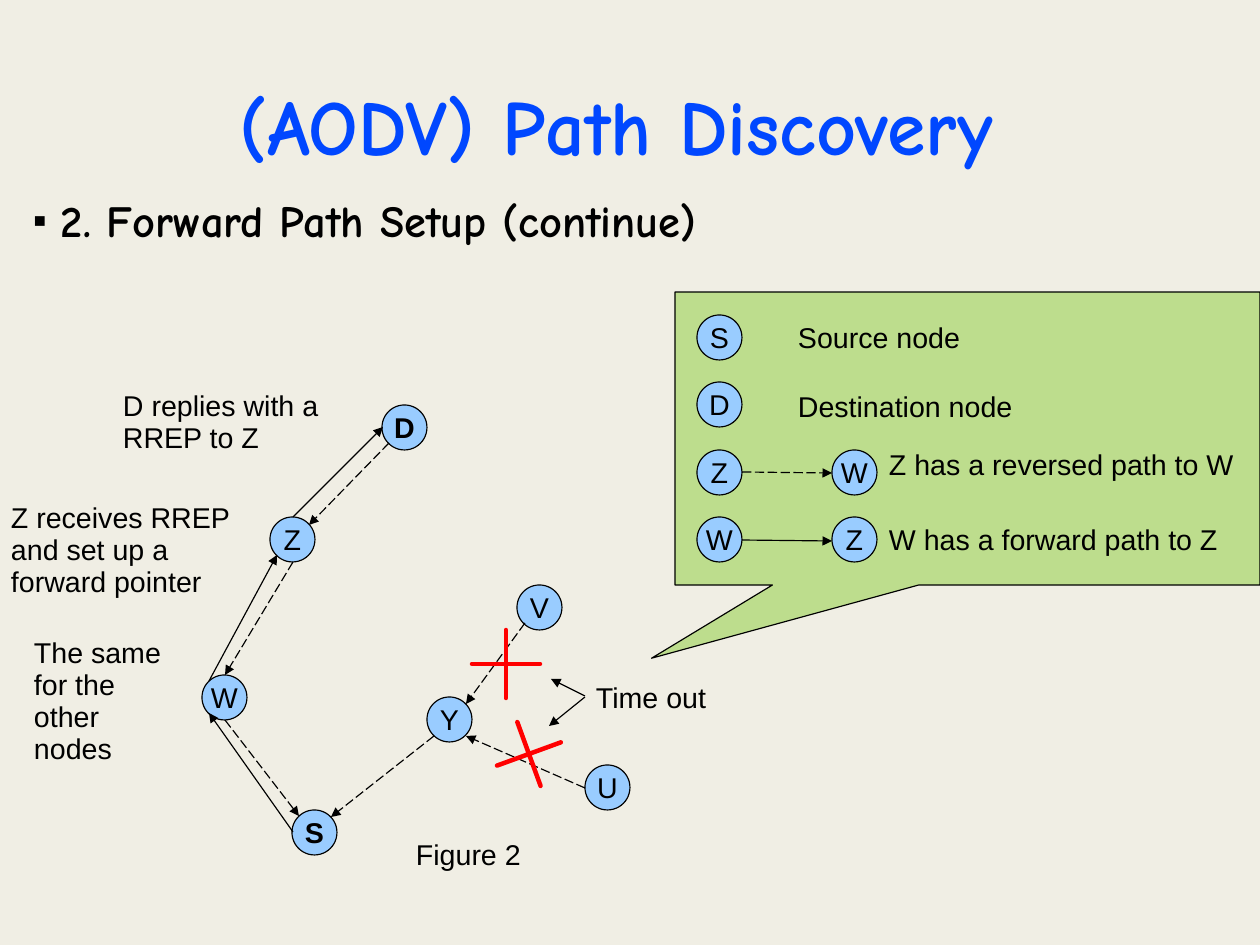
"""Build the slide on forward path setup in AODV path discovery."""
from dataclasses import dataclass

from lxml.etree import SubElement
from pptx import Presentation
from pptx.dml.color import RGBColor
from pptx.enum.dml import MSO_LINE
from pptx.enum.shapes import MSO_CONNECTOR, MSO_SHAPE
from pptx.enum.text import MSO_ANCHOR, MSO_AUTO_SIZE, PP_ALIGN
from pptx.oxml.ns import qn
from pptx.shapes.autoshape import Shape
from pptx.slide import Slide
from pptx.text.text import TextFrame
from pptx.util import Emu, Pt

SCALE = 8000
SIZE = 45
CROSS = 68
PAPER = RGBColor(0xF0, 0xEE, 0xE4)
BLACK = RGBColor(0, 0, 0)
BLUE = RGBColor(0x00, 0x47, 0xFF)
SKY = RGBColor(0x99, 0xCC, 0xFF)
GREEN = RGBColor(0xBD, 0xDD, 0x8D)
RED = RGBColor(0xFF, 0, 0)


@dataclass(frozen=True)
class Node:
    """A lettered circle."""
    text: str
    left: int
    top: int
    bold: bool = False


@dataclass(frozen=True)
class Label:
    """A block of plain text."""
    text: str
    left: int
    top: int
    width: int
    height: int = 43


@dataclass(frozen=True)
class Arrow:
    """A line with a head at its end."""
    left: int
    top: int
    right: int
    end: int
    dashed: bool = False


@dataclass(frozen=True)
class Cross:
    """A red mark on a path that timed out."""
    left: int
    top: int
    turn: int = 0


NODES = (
    Node("U", 585, 765), Node("D", 382, 405, True), Node("Y", 427, 697),
    Node("S", 292, 810, True), Node("V", 517, 585), Node("Z", 270, 517),
    Node("W", 202, 675),
    Node("S", 697, 315), Node("D", 697, 382),
    Node("Z", 697, 450), Node("W", 832, 450),
    Node("W", 697, 517), Node("Z", 832, 517),
)
LABELS = (
    Label("Source node", 787, 315, 337),
    Label("Destination node", 787, 384, 270),
    Label("Z has a reversed path to W", 878, 442, 382),
    Label("W has a forward path to Z", 878, 517, 360),
    Label("D replies with a RREP to Z", 112, 383, 247, 75),
    Label("Z receives RREP and set up a forward pointer", 0, 495, 247, 107),
    Label("The same for the other nodes", 23, 630, 158, 158),
    Label("Time out", 585, 675, 225),
    Label("Figure 2", 405, 832, 293),
)
ARROWS = (
    Arrow(225, 720, 299, 816, True), Arrow(434, 736, 331, 817, True),
    Arrow(293, 562, 225, 675, True), Arrow(525, 623, 466, 704, True),
    Arrow(585, 788, 466, 736, True), Arrow(389, 443, 309, 525, True),
    Arrow(742, 472, 832, 473, True), Arrow(742, 540, 832, 541),
    Arrow(293, 517, 383, 427), Arrow(209, 681, 277, 555),
    Arrow(293, 832, 209, 713), Arrow(585, 697, 549, 726),
    Arrow(585, 696, 551, 679),
)
MARKS = (Cross(472, 630), Cross(495, 720, -20))


def px(count: int) -> Emu:
    """Turn pixels into EMU."""
    return Emu(count * SCALE)


def place(shape: Shape, left: int, top: int, width: int, height: int) -> None:
    """Move and size a shape."""
    shape.left, shape.top = px(left), px(top)
    shape.width, shape.height = px(width), px(height)


def write(frame: TextFrame, text: str, size: int, font: str = "Arial",
          color: RGBColor = BLACK, bold: bool = False,
          space: float = 0.93, top: int = 8) -> None:
    """Fill a frame with one styled paragraph."""
    frame.text = text
    frame.auto_size = MSO_AUTO_SIZE.NONE
    frame.word_wrap = True
    frame.margin_left = frame.margin_right = px(11)
    frame.margin_top, frame.margin_bottom = px(top), px(6)
    line = frame.paragraphs[0]
    line.line_spacing = space
    line.space_before = Pt(0)
    face = line.runs[0].font
    face.name, face.size, face.bold = font, Pt(size), bold
    face.color.rgb = color


def paint(shape: Shape, fill: RGBColor, edge: RGBColor = BLACK,
          width: float = 0.75) -> None:
    """Give a shape its fill and line."""
    shape.shadow.inherit = False
    shape.fill.solid()
    shape.fill.fore_color.rgb = fill
    shape.line.color.rgb = edge
    shape.line.width = Pt(width)


def center(frame: TextFrame) -> None:
    """Center the text both ways."""
    frame.vertical_anchor = MSO_ANCHOR.MIDDLE
    frame.paragraphs[0].alignment = PP_ALIGN.CENTER


def add_heads(slide: Slide) -> None:
    """Fill the title and the list."""
    title, body = slide.shapes.title, slide.placeholders[1]
    place(title, 63, 38, 1134, 158)
    write(title.text_frame, "(AODV) Path Discovery ", 49, "Comic Neue",
          BLUE, True, 1.16, 6)
    center(title.text_frame)
    place(body, 23, 179, 1170, 737)
    write(body.text_frame, "2. Forward Path Setup (continue)", 28,
          "Comic Neue", BLACK, True, 1.16, 6)
    body.text_frame.vertical_anchor = MSO_ANCHOR.TOP
    props = body.text_frame.paragraphs[0]._p.get_or_add_pPr()
    props.set("marL", str(px(27)))
    props.set("indent", str(px(-27)))
    tint = SubElement(props, qn("a:buClr"))
    SubElement(tint, qn("a:srgbClr"), val=str(BLACK))
    SubElement(props, qn("a:buSzPct"), val="45000")
    SubElement(props, qn("a:buFont"), typeface="Arial")
    SubElement(props, qn("a:buChar"), char="■")


def add_legend(slide: Slide) -> None:
    """Draw the callout behind the legend."""
    box = slide.shapes.add_shape(MSO_SHAPE.RECTANGULAR_CALLOUT,
                                 px(675), px(292), px(585), px(293))
    box.adjustments[0], box.adjustments[1] = -0.54, 0.75
    paint(box, GREEN)


def add_node(slide: Slide, node: Node) -> None:
    """Draw a node."""
    disc = slide.shapes.add_shape(MSO_SHAPE.OVAL, px(node.left), px(node.top),
                                  px(SIZE), px(SIZE))
    paint(disc, SKY)
    write(disc.text_frame, node.text, 18, bold=node.bold)
    disc.text_frame.word_wrap = False
    center(disc.text_frame)


def add_label(slide: Slide, label: Label) -> None:
    """Write a label."""
    box = slide.shapes.add_textbox(px(label.left), px(label.top),
                                   px(label.width), px(label.height))
    write(box.text_frame, label.text, 18)


def add_arrow(slide: Slide, arrow: Arrow) -> None:
    """Draw an arrow."""
    link = slide.shapes.add_connector(
        MSO_CONNECTOR.STRAIGHT, px(arrow.left), px(arrow.top),
        px(arrow.right), px(arrow.end))
    link.line.color.rgb = BLACK
    link.line.width = Pt(0.75)
    if arrow.dashed:
        link.line.dash_style = MSO_LINE.LONG_DASH
    SubElement(link.line._get_or_add_ln(), qn("a:tailEnd"), type="triangle")
    SubElement(link._element.spPr, qn("a:effectLst"))


def add_cross(slide: Slide, cross: Cross) -> None:
    """Draw a cross from its middle out to each arm."""
    half = CROSS // 2
    hub = (half, half)
    pen = slide.shapes.build_freeform(half, 0, SCALE)
    pen.add_line_segments((hub, (0, half), hub, (half, CROSS), hub,
                           (CROSS, half), hub))
    shape = pen.convert_to_shape(px(cross.left), px(cross.top))
    shape.rotation = cross.turn
    paint(shape, SKY, RED, 2.83)


def main() -> None:
    """Build and save the deck."""
    deck = Presentation()
    deck.slide_width, deck.slide_height = px(1260), px(945)
    slide = deck.slides.add_slide(deck.slide_layouts[1])
    slide.background.fill.solid()
    slide.background.fill.fore_color.rgb = PAPER
    add_heads(slide)
    add_legend(slide)
    for items, draw in ((NODES, add_node), (LABELS, add_label),
                        (ARROWS, add_arrow), (MARKS, add_cross)):
        for item in items:
            draw(slide, item)
    deck.save("out.pptx")


if __name__ == "__main__":
    main()
